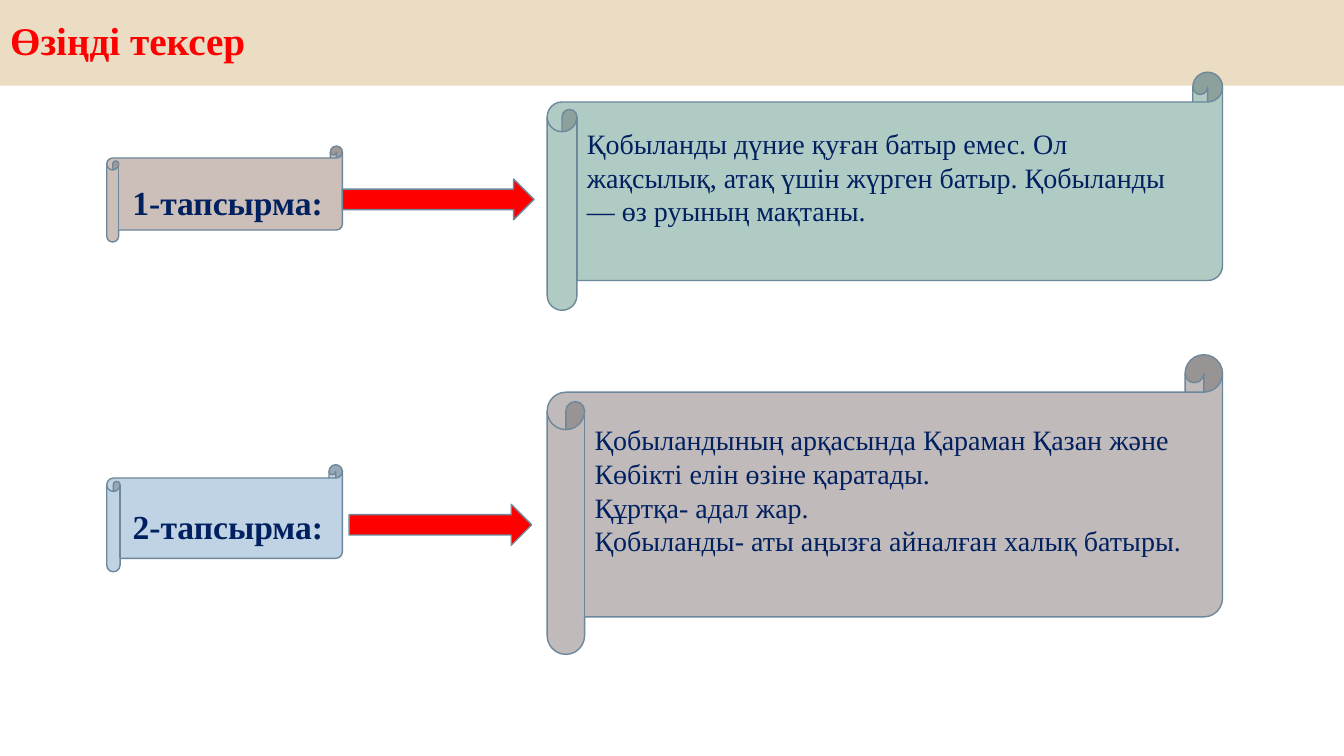
from pptx import Presentation
from pptx.dml.color import RGBColor
from pptx.enum.shapes import MSO_SHAPE
from pptx.enum.text import MSO_ANCHOR, PP_ALIGN
from pptx.util import Cm, Pt

SCROLL, ARROW = MSO_SHAPE.HORIZONTAL_SCROLL, MSO_SHAPE.RIGHT_ARROW
MIDDLE = MSO_ANCHOR.MIDDLE
LEFT, CENTER = PP_ALIGN.LEFT, PP_ALIGN.CENTER

RED = RGBColor(0xFF, 0x00, 0x00)
NAVY = RGBColor(0x00, 0x20, 0x60)
OUTLINE = RGBColor(0x6D, 0x87, 0x9B)
SAND = RGBColor(0xEB, 0xDD, 0xC3)
ROSE = RGBColor(0xCC, 0xBE, 0xB8)
GREEN = RGBColor(0xB0, 0xCA, 0xC4)
BLUE = RGBColor(0xBF, 0xD3, 0xE4)
GREY = RGBColor(0xC0, 0xBA, 0xBA)

TITLE_FONT = {"size": Pt(28), "bold": True}
LABEL_FONT = {"size": Pt(24), "bold": True}
ANSWER_FONT = {"size": Pt(20), "bold": False}

SLIDE_WIDTH, SLIDE_HEIGHT = 33.87, 19.05
LABEL_LEFT, LABEL_WIDTH = 2.69, 5.94
ANSWER_LEFT, ANSWER_WIDTH = 13.79, 17.02


class TaskSlide:
    """Holds the text style and the slide being built."""

    font_name = "Times New Roman"

    def __init__(self, presentation):
        self.slide = presentation.slides.add_slide(presentation.slide_layouts[5])

    def set_text(self, shape, paragraphs, font, color, alignment, insets=None):
        frame = shape.text_frame
        frame.word_wrap = True
        frame.vertical_anchor = MIDDLE
        for side, value in (insets or {}).items():
            setattr(frame, side, value)
        for index, text in enumerate(paragraphs):
            paragraph = frame.add_paragraph() if index else frame.paragraphs[0]
            paragraph.alignment = alignment
            run = paragraph.add_run()
            run.text = text
            run.font.color.rgb = color
            for name, value in {"name": self.font_name, **font}.items():
                setattr(run.font, name, value)

    def title(self, text, height):
        shape = self.slide.shapes.title
        box = {"left": 0, "top": 0, "width": Cm(SLIDE_WIDTH), "height": Cm(height)}
        for name, value in box.items():
            setattr(shape, name, value)
        shape.fill.solid()
        shape.fill.fore_color.rgb = SAND
        self.set_text(shape, [text], TITLE_FONT, RED, LEFT)
        shape.text_frame.paragraphs[0].line_spacing = 0.9

    def outlined(self, kind, left, top, width, height, fill):
        shape = self.slide.shapes.add_shape(
            kind, Cm(left), Cm(top), Cm(width), Cm(height))
        shape.shadow.inherit = False
        shape.fill.solid()
        shape.fill.fore_color.rgb = fill
        shape.line.color.rgb = OUTLINE
        shape.line.width = Pt(1)
        return shape

    def label(self, text, top, height, fill):
        shape = self.outlined(SCROLL, LABEL_LEFT, top, LABEL_WIDTH, height, fill)
        self.set_text(shape, [text], LABEL_FONT, NAVY, CENTER,
                      {"margin_top": Cm(0.53)})

    def answer(self, paragraphs, top, height, fill):
        shape = self.outlined(SCROLL, ANSWER_LEFT, top, ANSWER_WIDTH, height, fill)
        self.set_text(shape, paragraphs, ANSWER_FONT, NAVY, LEFT,
                      {"margin_bottom": Cm(0.85)})

    def arrow(self, left, top, width):
        self.outlined(ARROW, left, top, width, 1.03, RED)


def main():
    presentation = Presentation()
    presentation.slide_width = Cm(SLIDE_WIDTH)
    presentation.slide_height = Cm(SLIDE_HEIGHT)
    page = TaskSlide(presentation)

    # Heading band
    page.title("Өзіңді тексер", 2.16)

    # First task
    page.label("1-тапсырма:", 3.68, 2.42, ROSE)
    page.answer(["Қобыланды дүние қуған батыр емес. Ол жақсылық, атақ үшін "
                 "жүрген батыр. Қобыланды — өз руының мақтаны."],
                1.82, 6, GREEN)
    page.arrow(8.63, 4.51, 4.83)

    # Second task
    page.label("2-тапсырма:", 11.71, 2.7, BLUE)
    page.answer(["Қобыландының арқасында Қараман Қазан және Көбікті елін "
                 "өзіне қаратады.",
                 "Құртқа- адал жар.",
                 "Қобыланды- аты аңызға айналған халық батыры."],
                8.94, 7.55, GREY)
    page.arrow(8.8, 12.71, 4.6)

    presentation.save("out.pptx")


if __name__ == "__main__":
    main()
